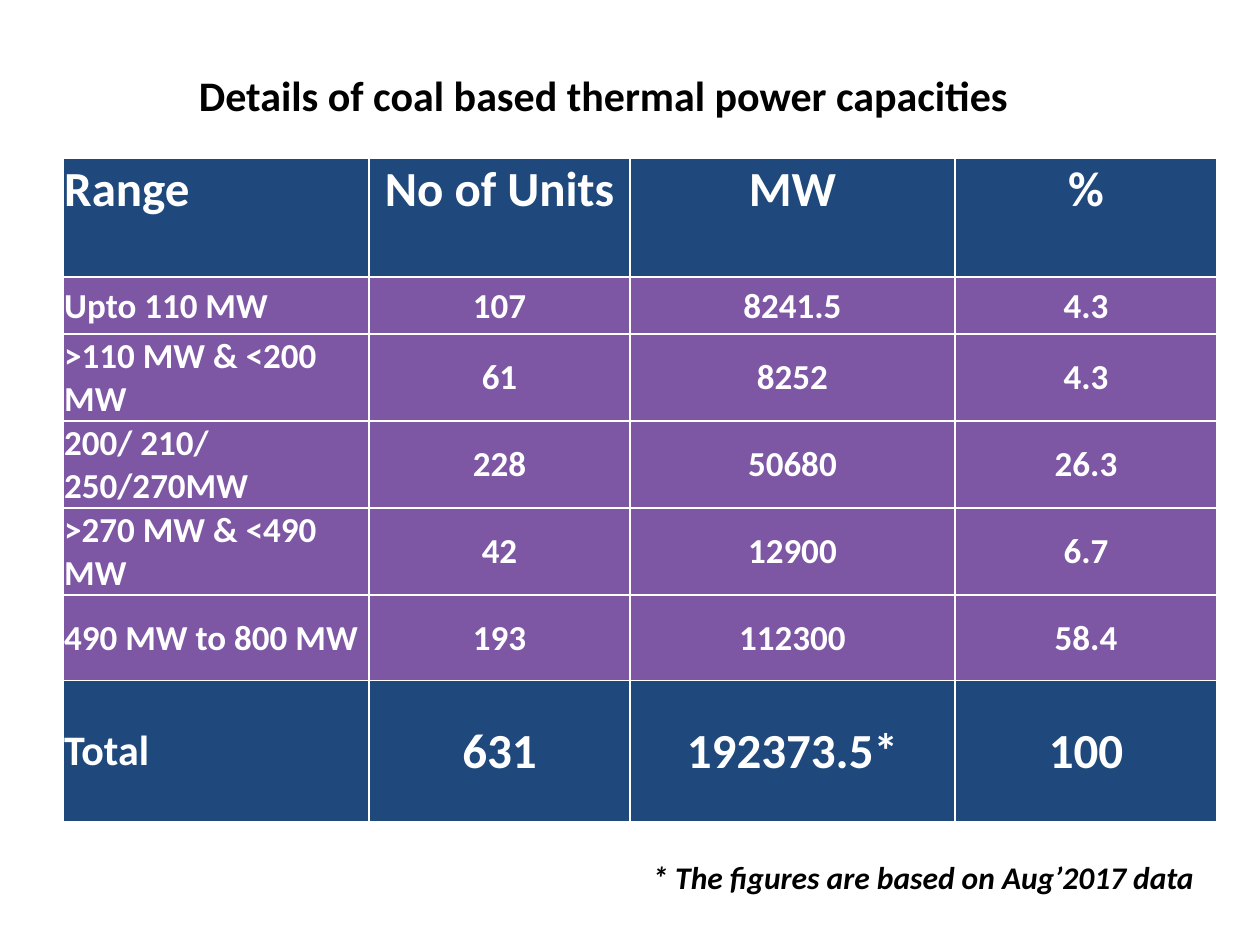
from dataclasses import dataclass

from lxml.etree import SubElement
from pptx import Presentation
from pptx.dml.color import RGBColor
from pptx.enum.text import MSO_ANCHOR, MSO_AUTO_SIZE, PP_ALIGN
from pptx.oxml.ns import qn
from pptx.slide import Slide
from pptx.table import _Cell
from pptx.text.text import _Paragraph
from pptx.util import Inches, Pt

FONT = "Calibri"
BLACK = RGBColor(0x00, 0x00, 0x00)
WHITE = RGBColor(0xFF, 0xFF, 0xFF)
NAVY = RGBColor(0x1F, 0x49, 0x7D)
PURPLE = RGBColor(0x7D, 0x57, 0xA4)

COLUMN_WIDTHS = (2.43, 2.07, 2.58, 2.08)


@dataclass(frozen=True)
class TableRow:
    values: tuple[str, str, str, str]
    height: float = 0.68
    fill: RGBColor = PURPLE
    label_size: int = 20
    value_size: int = 20
    anchor: MSO_ANCHOR = MSO_ANCHOR.MIDDLE


@dataclass(frozen=True)
class Caption:
    text: str
    left: float
    top: float
    width: float
    height: float
    size: int
    italic: bool = False


TABLE_ROWS = (
    TableRow(("Range", "No of Units", "MW", "%"), 0.94, NAVY, 28, 28, MSO_ANCHOR.TOP),
    TableRow(("Upto 110 MW", "107", "8241.5", "4.3"), 0.45),
    TableRow((">110 MW & <200 MW", "61", "8252", "4.3")),
    TableRow(("200/ 210/ 250/270MW", "228", "50680", "26.3")),
    TableRow((">270 MW & <490 MW", "42", "12900", "6.7")),
    TableRow(("490 MW to 800 MW", "193", "112300", "58.4")),
    TableRow(("Total", "631", "192373.5*", "100"), 1.12, NAVY, 24, 28),
)

CAPTIONS = (
    Caption("Details of coal based thermal power capacities", 1.48, 0.5, 6.69, 0.5, 24),
    Caption("* The figures are based on Aug’2017 data", 5.08, 6.76, 4.51, 0.4, 18, True),
)


def format_runs(paragraph: _Paragraph, size: int, color: RGBColor, italic: bool = False) -> None:
    for run in paragraph.runs:
        run.font.name = FONT
        run.font.size = Pt(size)
        run.font.bold = True
        run.font.italic = italic
        run.font.color.rgb = color


def add_borders(cell: _Cell) -> None:
    """Draw a thin white line on all four sides; lines must precede the fill."""
    properties = cell._tc.get_or_add_tcPr()
    for position, side in enumerate(("a:lnL", "a:lnR", "a:lnT", "a:lnB")):
        line = SubElement(properties, qn(side), w=str(Pt(1)))
        fill = SubElement(line, qn("a:solidFill"))
        SubElement(fill, qn("a:srgbClr"), val=str(WHITE))
        properties.insert(position, line)


def fill_cell(cell: _Cell, row: TableRow, column: int) -> None:
    cell.margin_left = cell.margin_right = cell.margin_top = Inches(0.01)
    cell.margin_bottom = Inches(0)
    cell.vertical_anchor = row.anchor
    cell.fill.solid()
    cell.fill.fore_color.rgb = row.fill
    add_borders(cell)
    cell.text_frame.text = row.values[column]
    paragraph = cell.text_frame.paragraphs[0]
    paragraph.alignment = PP_ALIGN.CENTER if column else PP_ALIGN.LEFT
    format_runs(paragraph, row.value_size if column else row.label_size, WHITE)


def add_capacity_table(slide: Slide) -> None:
    table = slide.shapes.add_table(
        len(TABLE_ROWS), len(COLUMN_WIDTHS), Inches(0.5), Inches(1.26),
        Inches(sum(COLUMN_WIDTHS)), Inches(sum(row.height for row in TABLE_ROWS)),
    ).table
    for column, width in zip(table.columns, COLUMN_WIDTHS):
        column.width = Inches(width)
    for row_index, row in enumerate(TABLE_ROWS):
        table.rows[row_index].height = Inches(row.height)
        for column_index in range(len(COLUMN_WIDTHS)):
            fill_cell(table.cell(row_index, column_index), row, column_index)


def add_caption(slide: Slide, caption: Caption) -> None:
    text_box = slide.shapes.add_textbox(
        Inches(caption.left), Inches(caption.top), Inches(caption.width), Inches(caption.height)
    )
    text_frame = text_box.text_frame
    text_frame.word_wrap = False
    text_frame.auto_size = MSO_AUTO_SIZE.SHAPE_TO_FIT_TEXT
    text_frame.text = caption.text
    format_runs(text_frame.paragraphs[0], caption.size, BLACK, caption.italic)


def main() -> None:
    presentation = Presentation()
    presentation.slide_width = Inches(10)
    presentation.slide_height = Inches(7.5)
    slide = presentation.slides.add_slide(presentation.slide_layouts[6])
    add_capacity_table(slide)
    for caption in CAPTIONS:
        add_caption(slide, caption)
    presentation.save("out.pptx")


if __name__ == "__main__":
    main()
